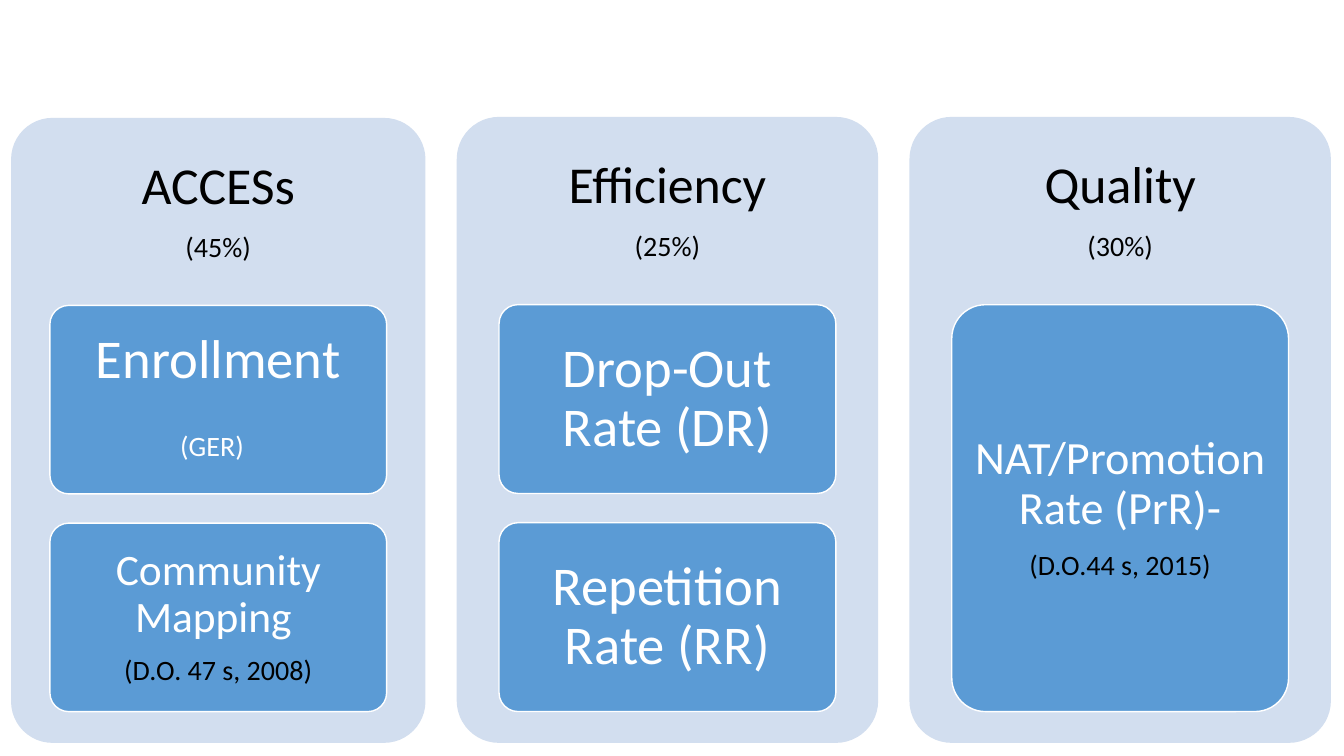
from lxml import etree
from pptx import Presentation
from pptx.dml.color import RGBColor
from pptx.enum.shapes import MSO_SHAPE as SHAPE
from pptx.enum.text import MSO_ANCHOR as ANCHOR, PP_ALIGN as ALIGN
from pptx.oxml.ns import qn
from pptx.util import Inches, Pt

PALE = RGBColor(0xD2, 0xDE, 0xEF)
BLUE = RGBColor(0x5B, 0x9B, 0xD5)
WHITE = RGBColor(0xFF, 0xFF, 0xFF)
BLACK = RGBColor(0, 0, 0)

HEADING_SHARE = 0.3
CARDS_SHARE = 0.65
CARD_WIDTH = 3.34
CARD_GAP = 0.29
NOTE_SIZE = 20

PILLARS = [
    ((0.11, 1.17, 4.11, 6.2), "ACCESs", "(45%)", [
        ([("Enrollment", 39, WHITE), ("(GER)", NOTE_SIZE, WHITE)], 0.11, 0.08),
        ([("Community Mapping ", 31, WHITE),
          ("(D.O. 47 s, 2008)", NOTE_SIZE, BLACK)], 0.09, 0.06),
    ]),
    ((4.53, 1.16, 4.18, 6.21), "Efficiency", "(25%)", [
        ([("Drop-Out Rate (DR)", 39, WHITE)], 0.11, 0.08),
        ([("Repetition Rate (RR)", 39, WHITE)], 0.11, 0.08),
    ]),
    ((9.02, 1.16, 4.18, 6.21), "Quality", "(30%)", [
        ([("NAT/Promotion Rate (PrR)-", 33, WHITE),
          ("(D.O.44 s, 2015)", NOTE_SIZE, BLACK)], 0.09, 0.07),
    ]),
]


def set_space_after(paragraph, share):
    paragraph.space_after = Pt(0)
    spacing = paragraph._p.pPr.find(qn("a:spcAft"))
    spacing.remove(spacing[0])
    percent = etree.SubElement(spacing, qn("a:spcPct"))
    percent.set("val", str(int(share * 100000)))


def write_lines(frame, lines, side, edge):
    frame.word_wrap = True
    frame.vertical_anchor = ANCHOR.MIDDLE
    frame.margin_left = frame.margin_right = Inches(side)
    frame.margin_top = frame.margin_bottom = Inches(edge)
    for index, (words, size, color) in enumerate(lines):
        paragraph = frame.add_paragraph() if index else frame.paragraphs[0]
        paragraph.alignment = ALIGN.CENTER
        paragraph.line_spacing = 0.9
        set_space_after(paragraph, 0.35)
        paragraph.font.name = "Calibri"
        paragraph.font.size = Pt(size)
        paragraph.font.color.rgb = color
        paragraph.add_run().text = words
        if words == "(GER)":
            tail = paragraph.add_run()
            tail.text = " "
            tail.font.size = Pt(lines[0][1])


def add_rounded(slide, box, fill):
    rounded = slide.shapes.add_shape(SHAPE.ROUNDED_RECTANGLE, *map(Inches, box))
    rounded.adjustments[0] = 0.1
    rounded.shadow.inherit = False
    rounded.fill.solid()
    rounded.fill.fore_color.rgb = fill
    rounded.line.fill.background()
    return rounded


def add_card(slide, box, lines, side, edge):
    card = add_rounded(slide, box, BLUE)
    card.line.color.rgb = WHITE
    card.line.width = Pt(1)
    write_lines(card.text_frame, lines, side, edge)


def add_pillar(slide, box, title, weight, cards):
    left, top, width, height = box
    add_rounded(slide, box, PALE)
    heading = slide.shapes.add_textbox(
        *map(Inches, (left, top, width, height * HEADING_SHARE)))
    write_lines(heading.text_frame,
                [(title, 37, BLACK), (weight, NOTE_SIZE, BLACK)], 0.15, 0.15)

    card_left = left + (width - CARD_WIDTH) / 2
    cards_top = top + height * HEADING_SHARE
    pitch = (height * CARDS_SHARE + CARD_GAP) / len(cards)
    for row, (lines, side, edge) in enumerate(cards):
        card_box = (card_left, cards_top + row * pitch, CARD_WIDTH, pitch - CARD_GAP)
        add_card(slide, card_box, lines, side, edge)


def main():
    deck = Presentation()
    deck.slide_width = Inches(13.33)
    deck.slide_height = Inches(7.5)
    slide = deck.slides.add_slide(deck.slide_layouts[6])
    for pillar in PILLARS:
        add_pillar(slide, *pillar)
    deck.save("out.pptx")


if __name__ == "__main__":
    main()
